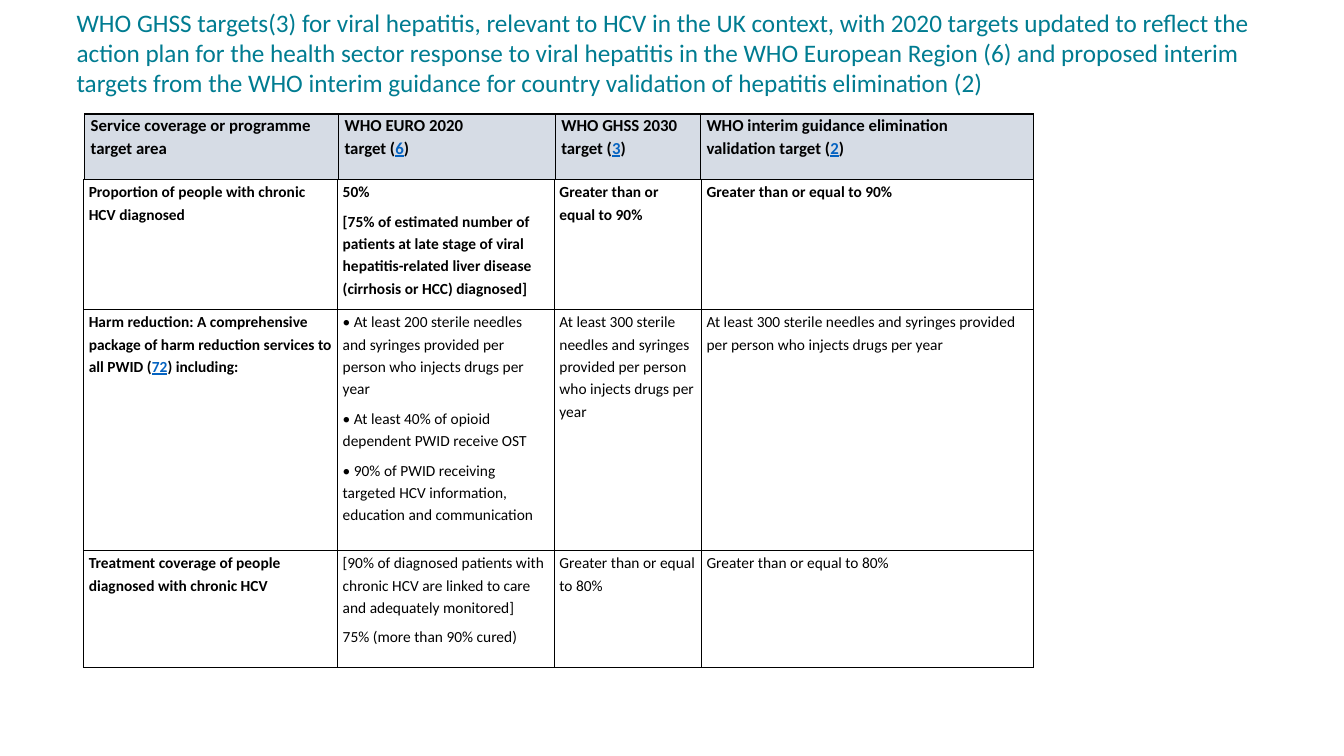
from dataclasses import dataclass
from lxml.etree import SubElement
from pptx import Presentation
from pptx.dml.color import RGBColor
from pptx.enum.text import MSO_ANCHOR, MSO_AUTO_SIZE, PP_ALIGN
from pptx.oxml.ns import qn
from pptx.util import Pt

FONT = "Calibri"
BLACK, LINK, TEAL, HEADER_FILL = "000000", "0563C1", "007C91", "D6DCE5"
TITLE = (
    "WHO GHSS targets(3) for viral hepatitis, relevant to HCV in the UK context, with 2020 targets "
    "updated to reflect the action plan for the health sector response to viral hepatitis in the "
    "WHO European Region (6) and proposed interim targets from the WHO interim guidance for country "
    "validation of hepatitis elimination (2)"
)


@dataclass(frozen=True)
class TargetRow:
    height: float
    cells: tuple[str | tuple[str, ...], ...]
    all_bold: bool = False


@dataclass(frozen=True)
class TargetTable:
    left: float
    top: float
    widths: tuple[float, ...]
    rows: tuple[TargetRow, ...]
    size: float
    margin: float
    fill: str | None = None


SYRINGES = "At least 300 sterile needles and syringes provided per person who injects drugs per year"

TARGETS = TargetTable(
    59.8, 128.2, (181.4, 154.8, 105.1, 236.9),
    (
        TargetRow(92.9, (
            "Proportion of people with chronic HCV diagnosed",
            ("50%", "[75% of estimated number of patients at late stage of viral hepatitis-related "
                    "liver disease (cirrhosis or HCC) diagnosed]"),
            "Greater than or equal to 90%",
            "Greater than or equal to 90%",
        ), all_bold=True),
        TargetRow(172.1, (
            "Harm reduction: A comprehensive package of harm reduction services to all PWID "
            "(|72|) including:",
            ("• At least 200 sterile needles and syringes provided per person who injects drugs per year",
             "• At least 40% of opioid dependent PWID receive OST",
             "• 90% of PWID receiving targeted HCV information, education and communication"),
            SYRINGES,
            SYRINGES,
        )),
        TargetRow(83.5, (
            "Treatment coverage of people diagnosed with chronic HCV",
            ("[90% of diagnosed patients with chronic HCV are linked to care and adequately monitored]",
             "75% (more than 90% cured)"),
            "Greater than or equal to 80%",
            "Greater than or equal to 80%",
        )),
    ),
    size=11, margin=3.6,
)

HEADER = TargetTable(
    60.5, 81.4, (181.4, 154.8, 103.7, 237.6),
    (
        TargetRow(46.8, (
            "Service coverage or programme target area",
            "WHO EURO 2020\ntarget (|6|)",
            "WHO GHSS 2030 target (|3|)",
            "WHO interim guidance elimination\nvalidation target (|2|)",
        ), all_bold=True),
    ),
    size=12, margin=4.3, fill=HEADER_FILL,
)


def colour(value: str) -> RGBColor:
    return RGBColor.from_string(value)


def add_borders(cell) -> None:
    properties = cell._tc.get_or_add_tcPr()
    for side in ("lnL", "lnR", "lnT", "lnB"):
        line = SubElement(properties, qn(f"a:{side}"), w=str(Pt(1)))
        fill = SubElement(line, qn("a:solidFill"))
        SubElement(fill, qn("a:srgbClr"), val=BLACK)


def write_paragraph(para, text: str, size: float, bold: bool) -> None:
    para.line_spacing = Pt(16)
    para.space_after = Pt(3)
    para.font.name = FONT
    para.font.size = Pt(size)
    para.font.bold = bold
    for index, part in enumerate(text.split("|")):
        is_link = index % 2 == 1
        for number, line in enumerate(part.split("\n")):
            if number:
                para.add_line_break()
            span = para.add_run()
            span.text = line
            span.font.color.rgb = colour(LINK if is_link else BLACK)
            if is_link:
                span.font.underline = True


def fill_cell(cell, content: str | tuple[str, ...], design: TargetTable, bold: bool) -> None:
    cell.margin_left = cell.margin_right = Pt(design.margin)
    cell.margin_top = cell.margin_bottom = 0
    cell.vertical_anchor = MSO_ANCHOR.TOP
    add_borders(cell)
    if design.fill:
        cell.fill.solid()
        cell.fill.fore_color.rgb = colour(design.fill)
    else:
        cell.fill.background()
    texts = (content,) if isinstance(content, str) else content
    for index, text in enumerate(texts):
        para = cell.text_frame.add_paragraph() if index else cell.text_frame.paragraphs[0]
        if index:
            para.space_before = Pt(2)
        write_paragraph(para, text, design.size, bold)


def add_target_table(page, design: TargetTable) -> None:
    frame = page.shapes.add_table(
        len(design.rows), len(design.widths), Pt(design.left), Pt(design.top),
        Pt(sum(design.widths)), Pt(sum(row.height for row in design.rows)),
    )
    table = frame.table
    table.first_row = table.horz_banding = False
    for column, width in zip(table.columns, design.widths):
        column.width = Pt(width)
    for row_index, row in enumerate(design.rows):
        table.rows[row_index].height = Pt(row.height)
        for column_index, content in enumerate(row.cells):
            bold = row.all_bold or column_index == 0
            fill_cell(table.cell(row_index, column_index), content, design, bold)


def set_title(page) -> None:
    title = page.shapes.title
    title.left, title.top, title.width, title.height = Pt(47.5), Pt(1.4), Pt(864.7), Pt(72.7)
    frame = title.text_frame
    frame.word_wrap = True
    frame.auto_size = MSO_AUTO_SIZE.SHAPE_TO_FIT_TEXT
    frame.vertical_anchor = MSO_ANCHOR.TOP
    para = frame.paragraphs[0]
    para.text = TITLE
    para.alignment = PP_ALIGN.LEFT
    para.line_spacing = 1.0
    para.font.name = FONT
    para.font.size = Pt(18)
    para.font.color.rgb = colour(TEAL)


def main() -> None:
    deck = Presentation()
    deck.slide_width, deck.slide_height = Pt(960), Pt(540)
    page = deck.slides.add_slide(deck.slide_layouts.get_by_name("Title Only"))
    add_target_table(page, TARGETS)
    add_target_table(page, HEADER)
    set_title(page)
    deck.save("out.pptx")


if __name__ == "__main__":
    main()
